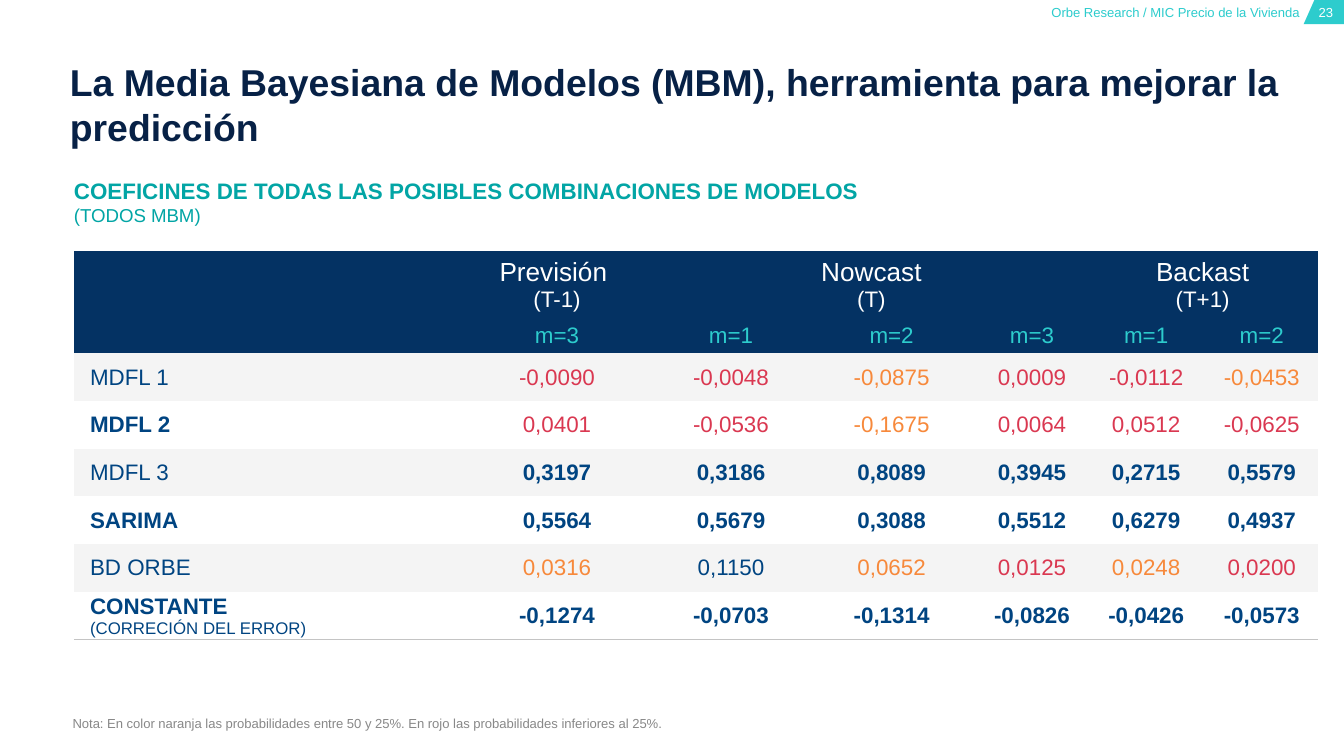
from lxml import etree
from pptx import Presentation
from pptx.dml.color import RGBColor
from pptx.enum.shapes import MSO_SHAPE
from pptx.enum.text import MSO_ANCHOR as ANCHOR, MSO_AUTO_SIZE as AUTO_SIZE, PP_ALIGN as ALIGN
from pptx.oxml import parse_xml
from pptx.oxml.ns import nsdecls, qn
from pptx.util import Inches, Pt

COLORS = {
    "title": "072146", "teal": "02A5A5", "aqua": "2DCCCD", "header": "043263",
    "blue": "004481", "red": "DA3851", "orange": "F7893B", "band": "F4F4F4",
    "line": "C4C4C4", "note": "888888", "white": "FFFFFF",
}


def color(name):
    return RGBColor.from_string(COLORS[name])


def write(frame, text, size=12, fill="blue", bold=False, align=ALIGN.LEFT,
          anchor=ANCHOR.TOP, indent=0, second_size=None):
    frame.word_wrap = True
    frame.vertical_anchor = anchor
    frame.margin_left = frame.margin_right = frame.margin_top = frame.margin_bottom = 0
    for index, line in enumerate(text.split("\n")):
        para = frame.add_paragraph() if index else frame.paragraphs[0]
        para.alignment = align
        if indent:
            para._p.get_or_add_pPr().set("marL", str(Inches(indent)))
        span = para.add_run()
        span.text = line
        span.font.name = "Arial"
        span.font.size = Pt(second_size if index else size)
        span.font.bold = bold and not index
        span.font.color.rgb = color(fill)


deck = Presentation()
deck.slide_width = Inches(10)
deck.slide_height = deck.slide_width * 9 // 16
page = deck.slides.add_slide(deck.slide_layouts[5])

outline = page.shapes.build_freeform(Inches(9.78), 0, scale=1.0)
corner = [(10, 0), (10, 0.18), (9.7, 0.18)]
outline.add_line_segments([(Inches(x), Inches(y)) for x, y in corner], close=True)
page_tab = outline.convert_to_shape()
page_tab.shadow.inherit = False
page_tab.fill.solid()
page_tab.fill.fore_color.rgb = color("aqua")
page_tab.line.fill.background()

title = page.shapes.title
title.left, title.top, title.width, title.height = (Inches(n) for n in (0.52, 0.44, 9.3, 0.37))
title.text_frame.auto_size = AUTO_SIZE.NONE
write(title.text_frame,
      "La Media Bayesiana de Modelos (MBM), herramienta para mejorar la predicción",
      size=20, fill="title", bold=True)

labels = [
    ((9.75, 0.03, 0.23, 0.12), "23", "white", ALIGN.CENTER, ANCHOR.TOP),
    ((7.7, 0.03, 1.97, 0.12), "Orbe Research / MIC Precio de la Vivienda", "aqua",
     ALIGN.RIGHT, ANCHOR.TOP),
    ((0.54, 5.22, 7.87, 0.22),
     "Nota: En color naranja las probabilidades entre 50 y 25%. "
     "En rojo las probabilidades inferiores al 25%.", "note", ALIGN.LEFT, ANCHOR.BOTTOM),
]
for place, text, fill, align, anchor in labels:
    box = page.shapes.add_textbox(*(Inches(n) for n in place))
    write(box.text_frame, text, size=7, fill=fill, align=align, anchor=anchor)

subtitle = page.shapes.add_shape(MSO_SHAPE.RECTANGLE, Inches(0.55), Inches(1.32),
                                 Inches(8.35), Inches(0.28))
subtitle.shadow.inherit = False
subtitle.fill.solid()
subtitle.fill.fore_color.rgb = color("white")
subtitle.line.fill.background()
write(subtitle.text_frame,
      "COEFICINES DE TODAS LAS POSIBLES COMBINACIONES DE MODELOS\n(TODOS MBM)",
      fill="teal", bold=True, second_size=10)

periods = {1: ("Previsión \n(T-1)", 1), 2: ("Nowcast\n(T)", 3), 5: ("Backast\n(T+1)", 2)}
months = ["m=3", "m=1", "m=2", "m=3", "m=1", "m=2"]
styles = {"r": ("red", False), "o": ("orange", False), "b": ("blue", False), "B": ("blue", True)}
models = [
    ("MDFL 1", False, "-0,0090 -0,0048 -0,0875 0,0009 -0,0112 -0,0453", "rrorro"),
    ("MDFL 2", True, "0,0401 -0,0536 -0,1675 0,0064 0,0512 -0,0625", "rrorrr"),
    ("MDFL 3", False, "0,3197 0,3186 0,8089 0,3945 0,2715 0,5579", "BBBBBB"),
    ("SARIMA", True, "0,5564 0,5679 0,3088 0,5512 0,6279 0,4937", "BBBBBB"),
    ("BD ORBE", False, "0,0316 0,1150 0,0652 0,0125 0,0248 0,0200", "oboror"),
    ("CONSTANTE\n(CORRECIÓN DEL ERROR)", True,
     "-0,1274 -0,0703 -0,1314 -0,0826 -0,0426 -0,0573", "BBBBBB"),
]
column_widths = [2.86, 1.47, 1.12, 1.27, 0.82, 0.88, 0.84]
row_heights = [0.5, 0.26] + [2.13 / len(models)] * len(models)

table = page.shapes.add_table(len(row_heights), len(column_widths), Inches(0.55), Inches(1.87),
                              Inches(sum(column_widths)), Inches(sum(row_heights))).table
table.first_row = table.horz_banding = False
table._tbl.tblPr.find(qn("a:tableStyleId")).text = "{2D5ABB26-0587-4C30-8999-92F81FD0307C}"
for column, width in zip(table.columns, column_widths):
    column.width = Inches(width)
for row, height in zip(table.rows, row_heights):
    row.height = Inches(height)

for column, (text, span_count) in periods.items():
    cell = table.cell(0, column)
    if span_count > 1:
        cell.merge(table.cell(0, column + span_count - 1))
    write(cell.text_frame, text, size=14, fill="white", align=ALIGN.CENTER, second_size=12)
for column, month in enumerate(months, 1):
    write(table.cell(1, column).text_frame, month, fill="aqua", align=ALIGN.CENTER)
for row, (name, bold, values, codes) in enumerate(models, 2):
    write(table.cell(row, 0).text_frame, name, bold=bold, indent=0.12, second_size=9)
    for column, (value, code) in enumerate(zip(values.split(), codes), 1):
        fill, strong = styles[code]
        write(table.cell(row, column).text_frame, value, fill=fill, bold=strong,
              align=ALIGN.CENTER)

for row in range(len(row_heights)):
    for column in range(len(column_widths)):
        cell = table.cell(row, column)
        cell.margin_left = cell.margin_right = cell.margin_bottom = 0
        cell.margin_top = Inches(0 if row else 0.05)
        cell.vertical_anchor = ANCHOR.MIDDLE if row else ANCHOR.TOP
        if not cell.text_frame.text:
            end = etree.SubElement(cell.text_frame.paragraphs[0]._p, qn("a:endParaRPr"))
            end.set("sz", "1200")
        if row == len(row_heights) - 1:
            cell._tc.get_or_add_tcPr().append(parse_xml(
                f'<a:lnB {nsdecls("a")} w="{Pt(0.5)}"><a:solidFill>'
                f'<a:srgbClr val="{COLORS["line"]}"/></a:solidFill></a:lnB>'))
        cell.fill.solid()
        cell.fill.fore_color.rgb = color("header" if row < 2 else "white" if row % 2 else "band")

deck.save("out.pptx")
